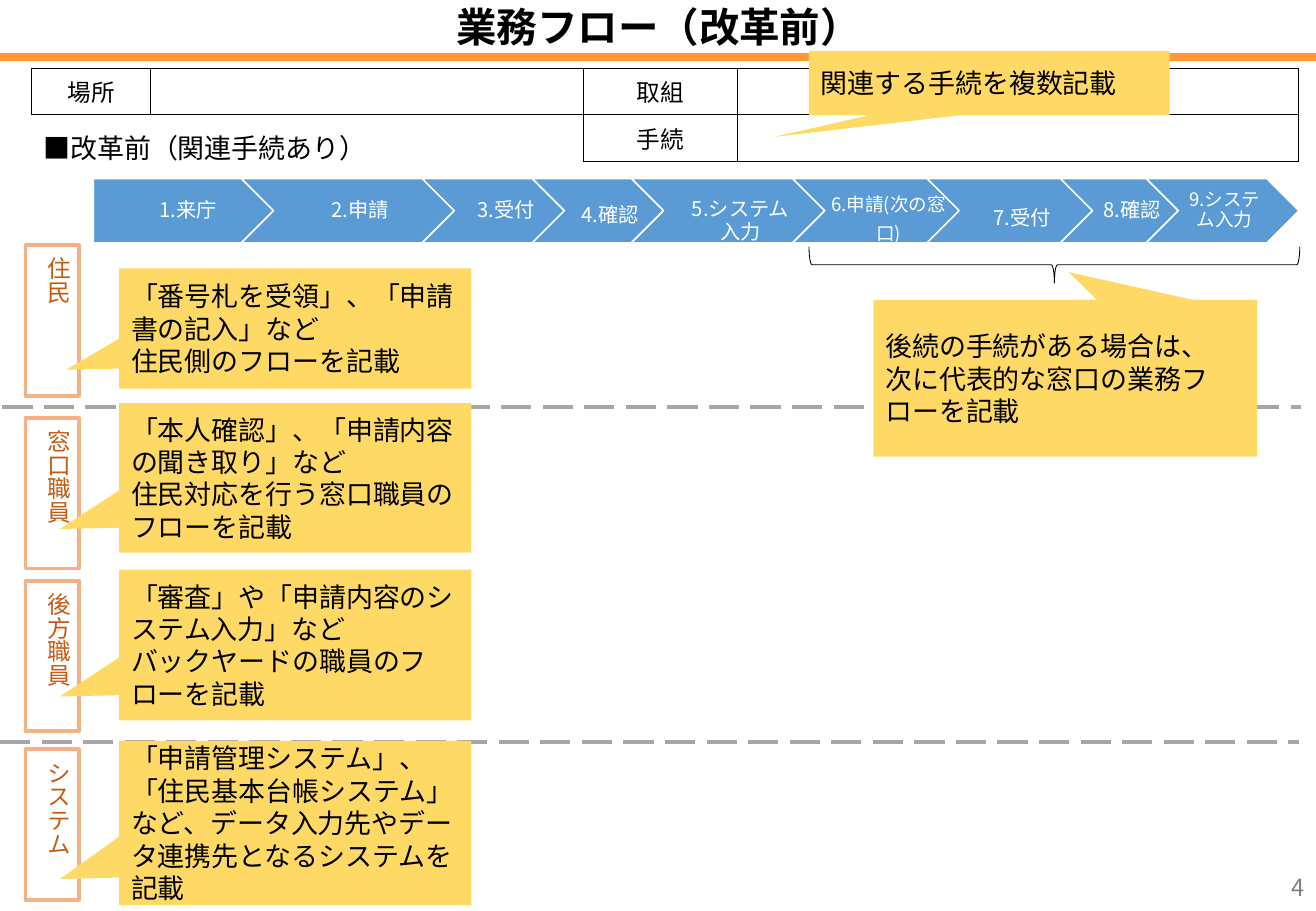
"""Build the pre-reform business flow slide."""
from lxml.etree import SubElement
from pptx import Presentation
from pptx.dml.color import RGBColor
from pptx.enum.dml import MSO_LINE
from pptx.enum.shapes import MSO_CONNECTOR, MSO_SHAPE
from pptx.enum.text import MSO_ANCHOR, MSO_AUTO_SIZE, PP_ALIGN
from pptx.oxml.ns import qn
from pptx.util import Pt

COLORS = {
    "black": "000000", "white": "FFFFFF", "orange": "FF9933", "peach": "F4B183",
    "brown": "C55A11", "dash": "A6A6A6", "number": "808080", "blue": "5B9BD5",
    "yellow": "FFD966",
}
FONT = "Noto Sans CJK JP"
STEP_LEFT, STEP_OVERLAP = 55.4, 31.9
STEPS = [
    ("1.来庁", 119.5, {}),
    ("2.申請", 139, {}),
    ("3.受付", 97.2, {}),
    ("4.確認", 90.7, {"top_inset": 14.4, "spacing": Pt(14), "anchor": MSO_ANCHOR.TOP}),
    ("5.システム\n入力", 127.4, {"top_inset": 14.4, "spacing": Pt(14)}),
    ("6.申請(次の窓口)", 111.6, {"top_inset": 8.6, "spacing": Pt(16.8), "size": 11}),
    ("7.受付", 110.9, {"top_inset": 8.6, "spacing": Pt(16.8)}),
    ("8.確認", 82.8, {}),
    ("9.システム入力", 90.7, {"top_inset": 2.2, "size": 11}),
]
LANES = [("住民", 145.4), ("窓口職員", 247.7), ("後方職員", 344.2), ("システム", 444.2)]
CALLOUTS = [
    ("後続の手続がある場合は、\n次に代表的な窓口の業務フローを記載",
     (517.7, 177.8, 227.5, 92.9), (0.008, -0.678)),
    ("関連する手続を複数記載", (479.5, 30.2, 213.8, 38.2), (-0.597, 0.835)),
    ("「番号札を受領」、「申請書の記入」など\n住民側のフローを記載",
     (70.6, 159.1, 208.8, 71.3), (-0.65, 0.342)),
    ("「本人確認」、「申請内容の聞き取り」など\n住民対応を行う窓口職員のフローを記載",
     (70.6, 239, 208.8, 88.6), (-0.668, 0.342)),
    ("「審査」や「申請内容のシステム入力」など\nバックヤードの職員のフローを記載",
     (70.6, 337.7, 208.8, 89.3), (-0.668, 0.342)),
    ("「申請管理システム」、「住民基本台帳システム」など、"
     "データ入力先やデータ連携先となるシステムを記載",
     (70.6, 439.2, 208.8, 97.2), (-0.668, 0.342)),
]


class FlowSlide:
    """Hold the style and the current slide."""

    def __init__(self, presentation):
        """Add a slide with only a title."""
        self.slide = presentation.slides.add_slide(presentation.slide_layouts[5])
        self.shapes = self.slide.shapes

    def color(self, name):
        """Return a named colour."""
        return RGBColor.from_string(COLORS[name])

    def set_text(self, frame, text, size, color="black", align=PP_ALIGN.LEFT,
                 font=FONT, bold=False, spacing=None, after=0):
        """Set the text of a frame and format its runs."""
        frame.text = text
        for paragraph in frame.paragraphs:
            paragraph.alignment = align
            paragraph.space_after = Pt(after)
            if spacing is not None:
                paragraph.line_spacing = spacing
            for run in paragraph.runs:
                run.font.size = Pt(size)
                run.font.bold = bold
                run.font.color.rgb = self.color(color)
                run.font.name = font
                SubElement(run.font._element, qn("a:ea"), typeface=FONT)

    def title(self, text, box):
        """Place the title."""
        heading = self.shapes.title
        heading.left, heading.top, heading.width, heading.height = map(Pt, box)
        frame = heading.text_frame
        frame.auto_size = MSO_AUTO_SIZE.NONE
        frame.vertical_anchor = MSO_ANCHOR.MIDDLE
        self.set_text(frame, text, 24, align=PP_ALIGN.CENTER, bold=True, spacing=0.9)

    def label(self, text, box, size, anchor=MSO_ANCHOR.TOP, **style):
        """Add a text box."""
        frame = self.shapes.add_textbox(*map(Pt, box)).text_frame
        frame.word_wrap = True
        frame.vertical_anchor = anchor
        self.set_text(frame, text, size, **style)

    def rule(self, start, end, color, width, dash=None):
        """Add a straight line."""
        line = self.shapes.add_connector(MSO_CONNECTOR.STRAIGHT, *map(Pt, start + end))
        line.line.color.rgb = self.color(color)
        line.line.width = Pt(width)
        if dash:
            line.line.dash_style = dash
        SubElement(line._element.spPr, qn("a:effectLst"))

    def shape(self, preset, box, fill=None, line=None, width=1):
        """Add a preset shape without a shadow."""
        outline = self.shapes.add_shape(preset, *map(Pt, box))
        outline.shadow.inherit = False
        if fill:
            outline.fill.solid()
            outline.fill.fore_color.rgb = self.color(fill)
        else:
            outline.fill.background()
        if line:
            outline.line.color.rgb = self.color(line)
            outline.line.width = Pt(width)
        else:
            outline.line.fill.background()
        return outline

    def step(self, text, preset, left, width, top_inset=2.9, spacing=0.9,
             size=12, anchor=MSO_ANCHOR.MIDDLE):
        """Add one arrow of the process."""
        arrow = self.shape(preset, (left, 105.8, width, 38.2), "blue", "white")
        frame = arrow.text_frame
        frame.margin_left, frame.margin_right = Pt(3.6), Pt(1.4)
        frame.margin_top, frame.margin_bottom = Pt(top_inset), Pt(2.9)
        frame.vertical_anchor = anchor
        after = 0.35 * size if spacing == 0.9 else 0
        self.set_text(frame, text, size, "white", PP_ALIGN.CENTER,
                      spacing=spacing, after=after)

    def lane(self, text, top):
        """Add a lane heading with vertical text."""
        heading = self.shape(MSO_SHAPE.RECTANGLE, (15.1, top, 31.7, 89.3),
                             line="peach", width=2.25)
        frame = heading.text_frame
        frame.vertical_anchor = MSO_ANCHOR.TOP
        frame._txBody.bodyPr.set("vert", "eaVert")
        self.set_text(frame, text, 14, "brown")

    def callout(self, text, box, tip):
        """Add a yellow note pointing at its subject."""
        note = self.shape(MSO_SHAPE.RECTANGULAR_CALLOUT, box, "yellow")
        note.adjustments[0], note.adjustments[1] = tip
        note.text_frame.vertical_anchor = MSO_ANCHOR.MIDDLE
        self.set_text(note.text_frame, text, 16, font="Calibri")

    def brace(self, box):
        """Add a brace turned to open upwards."""
        self.shape(MSO_SHAPE.LEFT_BRACE, box, line="black", width=0.5).rotation = 270

    def form(self, headings, left, widths):
        """Add a table of headings beside empty fields."""
        box = (left, 40.3, sum(widths), 24.5 * len(headings))
        table = self.shapes.add_table(len(headings), 2, *map(Pt, box)).table
        table.first_row = table.horz_banding = False
        for column, width in zip(table.columns, widths):
            column.width = Pt(width)
        for row, heading in enumerate(headings):
            self.set_text(table.cell(row, 0).text_frame, heading, 14,
                          align=PP_ALIGN.CENTER)
            SubElement(table.cell(row, 1).text_frame.paragraphs[0]._p,
                       qn("a:endParaRPr"), sz="1400")
        for cell in table.iter_cells():
            cell.vertical_anchor = MSO_ANCHOR.MIDDLE
            self.border(cell)
            cell.fill.background()

    def border(self, cell):
        """Draw thin lines around a cell."""
        properties = cell._tc.get_or_add_tcPr()
        for side in ("a:lnL", "a:lnR", "a:lnT", "a:lnB"):
            edge = SubElement(properties, qn(side), w=str(Pt(0.5)))
            SubElement(SubElement(edge, qn("a:solidFill")), qn("a:srgbClr"),
                       val=COLORS["black"])


def main():
    """Build and save the slide."""
    presentation = Presentation()
    presentation.slide_width, presentation.slide_height = Pt(780), Pt(540)
    flow = FlowSlide(presentation)
    flow.rule((0, 33.8), (780, 33.8), "orange", 5)
    flow.form(["場所"], 18.7, (70.6, 256.3))
    flow.title("業務フロー（改革前）", (34.6, 3.6, 711.4, 27.4))
    flow.form(["取組", "手続"], 345.6, (91.4, 332.6))
    flow.label("■改革前（関連手続あり）", (18.7, 74.2, 326.9, 26.6), 16)
    for text, top in LANES:
        flow.lane(text, top)
    for left, top in ((1.4, 241.2), (0, 439.9)):
        flow.rule((left, top), (left + 769.7, top), "dash", 2.25, MSO_LINE.LONG_DASH)
    left = STEP_LEFT
    for index, (text, width, style) in enumerate(STEPS):
        preset = MSO_SHAPE.CHEVRON if index else MSO_SHAPE.PENTAGON
        flow.step(text, preset, left, width, **style)
        left += width - STEP_OVERLAP
    flow.brace((614.2, 11.5, 21.6, 290.9))
    flow.label("4", (604.8, 511.2, 175.7, 28.8), 14, MSO_ANCHOR.MIDDLE,
               color="number", align=PP_ALIGN.RIGHT)
    for text, box, tip in CALLOUTS:
        flow.callout(text, box, tip)
    presentation.save("out.pptx")


if __name__ == "__main__":
    main()
